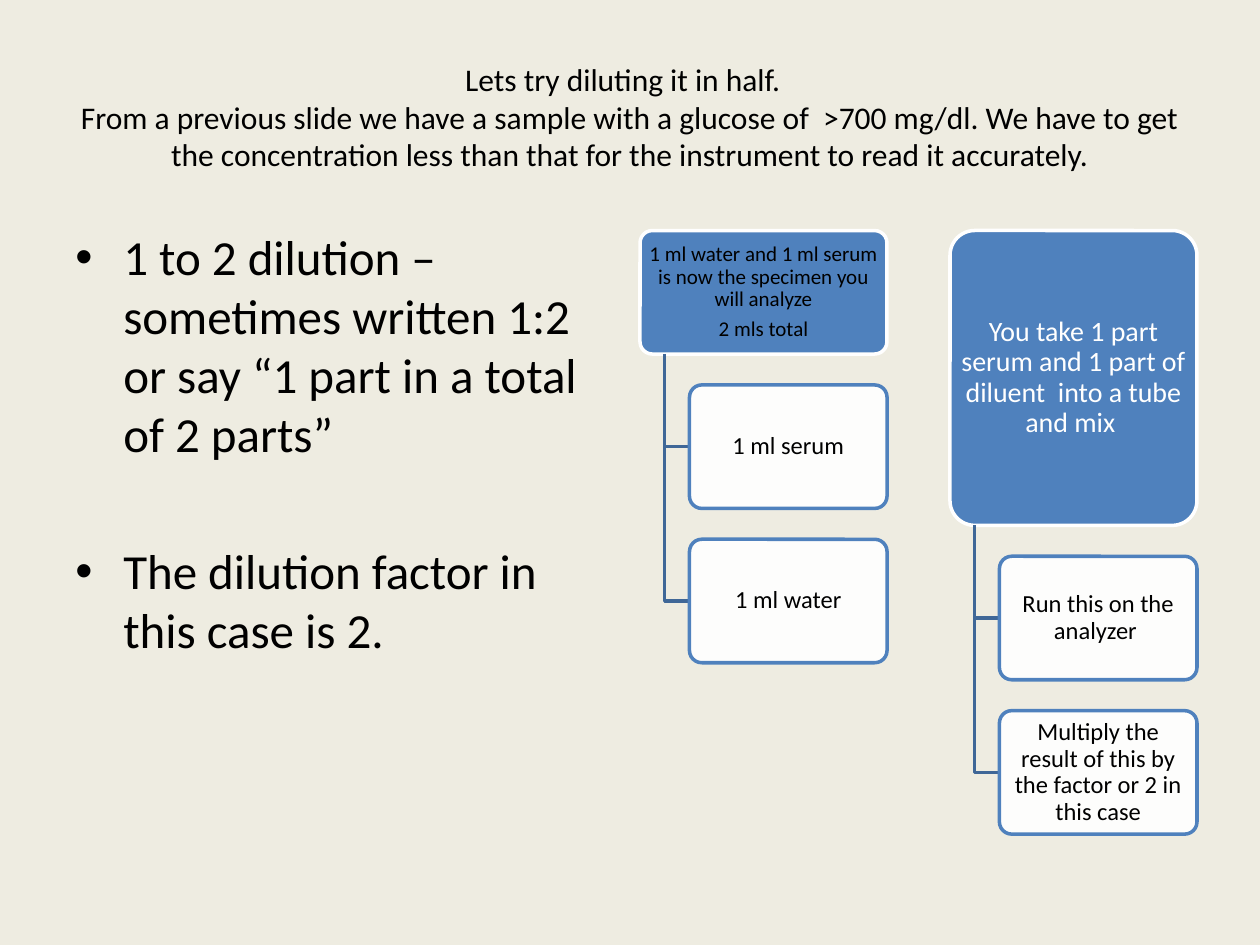
from dataclasses import dataclass

from lxml import etree
from pptx import Presentation
from pptx.dml.color import RGBColor
from pptx.enum import shapes, text
from pptx.oxml.ns import qn
from pptx.util import Inches, Pt


@dataclass(frozen=True)
class Theme:
    font: str = "Calibri"
    background: str = "EEECE1"
    black: str = "000000"
    white: str = "FFFFFF"
    blue: str = "4F81BD"
    connector: str = "3F6797"
    title_size: float = 18
    body_size: float = 28
    step_size: float = 14
    line_width: float = 2


@dataclass(frozen=True)
class Branch:
    left: float
    header_height: float
    header: str
    header_size: float
    header_color: str
    steps: tuple[str, ...]


THEME = Theme()
BRANCH_TOP = 1.83
HEADER_WIDTH = 1.96
STEP_HEIGHT = HEADER_WIDTH / 2
STEP_WIDTH = HEADER_WIDTH * 0.8
STEP_GAP = STEP_HEIGHT / 4
STUB = HEADER_WIDTH / 10

TITLE = (
    "Lets try diluting it in half.  \vFrom a previous slide we have a sample with a "
    "glucose of  >700 mg/dl. We have to get the concentration less than that for the "
    "instrument to read it accurately."
)
BULLETS = (
    "1 to 2 dilution – sometimes written 1:2 or say “1 part in a total of 2 parts”",
    "The dilution factor in this case is 2.",
)
BRANCHES = (
    Branch(
        5.08, STEP_HEIGHT,
        "1 ml water and 1 ml serum is now the specimen you will analyze\n2 mls total",
        12, THEME.black, ("1 ml serum", "1 ml water"),
    ),
    Branch(
        7.54, 2.34,
        "You take 1 part serum and 1 part of diluent  into a tube and mix ",
        16, THEME.white,
        ("Run this on the analyzer ",
         "Multiply the result of this by the factor or 2 in this case"),
    ),
)


def rgb(color: str) -> RGBColor:
    return RGBColor.from_string(color)


def format_runs(paragraph, size: float, color: str) -> None:
    for run in paragraph.runs:
        run.font.name = THEME.font
        run.font.size = Pt(size)
        run.font.color.rgb = rgb(color)


def add_title(slide) -> None:
    title = slide.shapes.title
    title.left, title.top = Inches(0.5), Inches(0.3)
    title.width, title.height = Inches(9), Inches(1.25)
    frame = title.text_frame
    frame.text = TITLE
    frame.word_wrap = True
    frame.vertical_anchor = text.MSO_ANCHOR.MIDDLE
    frame.paragraphs[0].alignment = text.PP_ALIGN.CENTER
    format_runs(frame.paragraphs[0], THEME.title_size, THEME.black)


def add_bullets(slide) -> None:
    box = slide.shapes.add_textbox(Inches(0.5), Inches(1.75), Inches(4.42), Inches(4.95))
    frame = box.text_frame
    frame.text = "\n".join(BULLETS)
    frame.word_wrap = True
    for paragraph, space_before in zip(frame.paragraphs, (5.6, 45)):
        paragraph.space_before = Pt(space_before)
        format_runs(paragraph, THEME.body_size, THEME.black)
        properties = paragraph._p.get_or_add_pPr()
        properties.set("marL", str(Inches(0.38)))
        properties.set("indent", str(Inches(-0.38)))
        etree.SubElement(properties, qn("a:buFont"), typeface="Arial")
        etree.SubElement(properties, qn("a:buChar"), char="•")


def add_box(slide, left: float, top: float, width: float, height: float, words: str,
            size: float, text_color: str, fill: str, line: str):
    box = slide.shapes.add_shape(
        shapes.MSO_SHAPE.ROUNDED_RECTANGLE,
        Inches(left), Inches(top), Inches(width), Inches(height),
    )
    box.adjustments[0] = 0.1
    box.shadow.inherit = False
    box.fill.solid()
    box.fill.fore_color.rgb = rgb(fill)
    box.line.color.rgb = rgb(line)
    box.line.width = Pt(THEME.line_width)
    frame = box.text_frame
    frame.text = words
    frame.word_wrap = True
    frame.vertical_anchor = text.MSO_ANCHOR.MIDDLE
    frame.margin_left = frame.margin_right = Inches(0.03)
    frame.margin_top = frame.margin_bottom = Inches(0.02)
    for paragraph in frame.paragraphs:
        paragraph.alignment = text.PP_ALIGN.CENTER
        paragraph.line_spacing = 0.9
        paragraph.space_after = Pt(size * 0.35)
        format_runs(paragraph, size, text_color)
    return box


def add_elbow(slide, left: float, top: float, bottom: float) -> None:
    """Draw a line down from a header and right to the side of a step."""
    builder = slide.shapes.build_freeform(Inches(left), Inches(top))
    builder.add_line_segments(
        [(Inches(left), Inches(bottom)), (Inches(left + STUB), Inches(bottom))],
        close=False,
    )
    elbow = builder.convert_to_shape()
    elbow.shadow.inherit = False
    elbow.fill.background()
    elbow.line.color.rgb = rgb(THEME.connector)
    elbow.line.width = Pt(THEME.line_width)


def add_branch(slide, branch: Branch) -> None:
    add_box(slide, branch.left, BRANCH_TOP, HEADER_WIDTH, branch.header_height,
            branch.header, branch.header_size, branch.header_color,
            THEME.blue, THEME.white)
    header_bottom = BRANCH_TOP + branch.header_height
    for index, words in enumerate(branch.steps):
        top = header_bottom + STEP_GAP + index * (STEP_HEIGHT + STEP_GAP)
        add_elbow(slide, branch.left + STUB, header_bottom, top + STEP_HEIGHT / 2)
        step = add_box(slide, branch.left + 2 * STUB, top, STEP_WIDTH, STEP_HEIGHT,
                       words, THEME.step_size, THEME.black, THEME.white, THEME.blue)
        fill_color = step.fill._xPr.find(qn("a:solidFill"))[0]
        etree.SubElement(fill_color, qn("a:alpha"), val="90000")


def main() -> None:
    presentation = Presentation()
    presentation.slide_width, presentation.slide_height = Inches(10), Inches(7.5)
    slide = presentation.slides.add_slide(presentation.slide_layouts[5])
    slide.background.fill.solid()
    slide.background.fill.fore_color.rgb = rgb(THEME.background)
    add_title(slide)
    add_bullets(slide)
    for branch in BRANCHES:
        add_branch(slide, branch)
    presentation.save("out.pptx")


if __name__ == "__main__":
    main()
